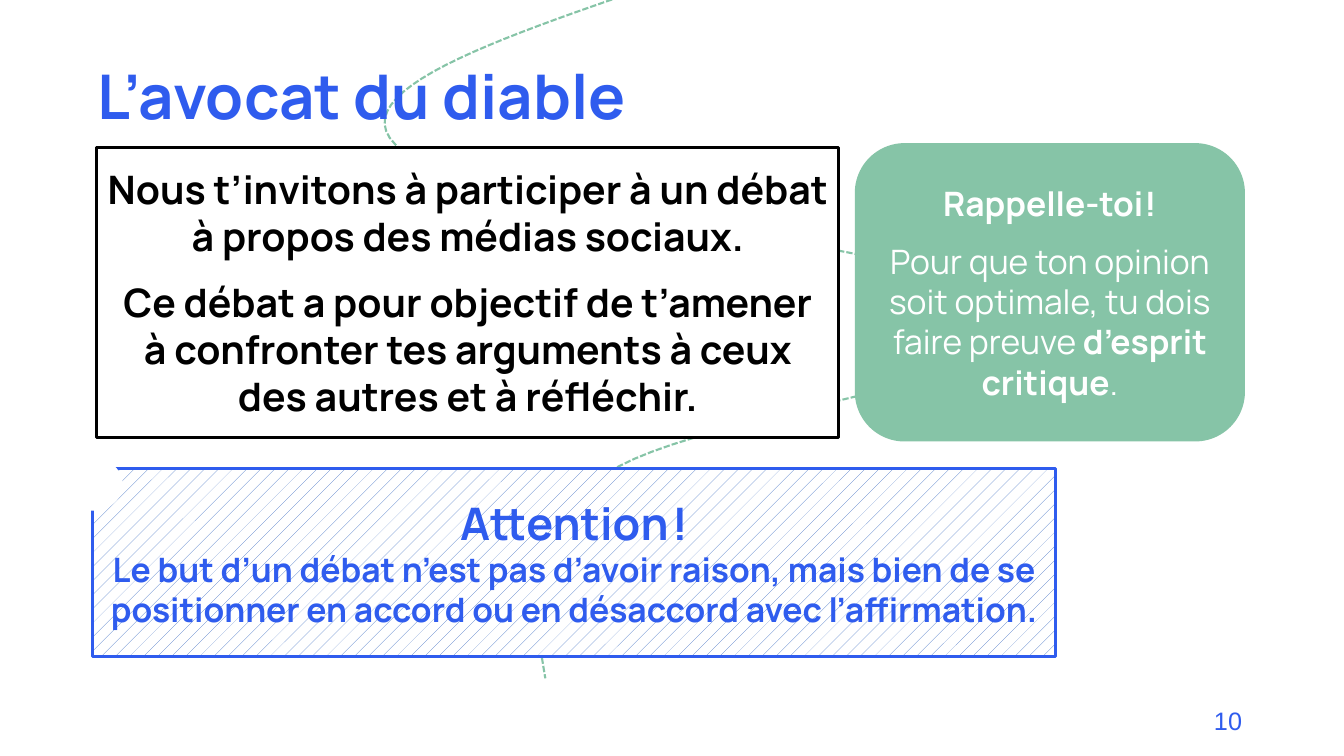
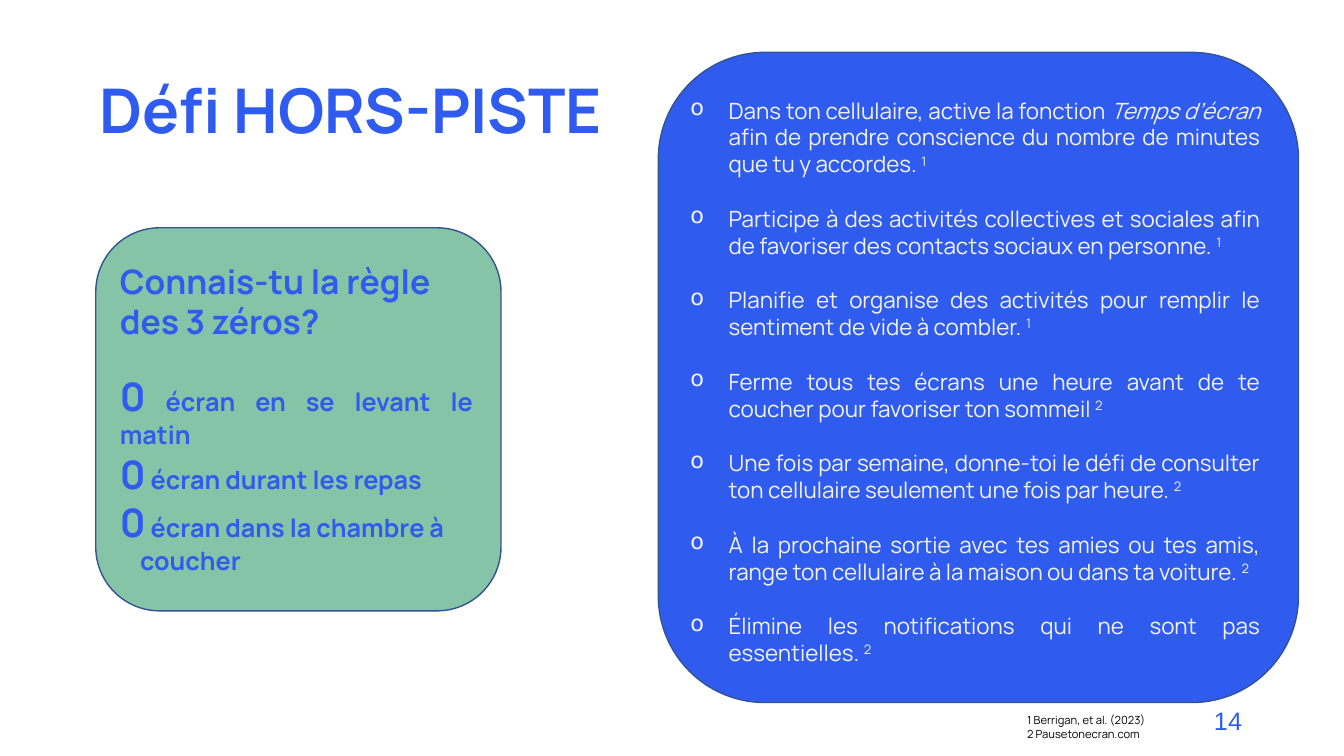
from lxml import etree
from pptx import Presentation
from pptx.dml.color import RGBColor
from pptx.enum.dml import MSO_LINE, MSO_PATTERN
from pptx.enum.shapes import MSO_SHAPE as Preset
from pptx.enum.text import MSO_ANCHOR as Anchor, PP_ALIGN as Align
from pptx.oxml.ns import qn
from pptx.util import Inches, Pt

BLUE, GREEN, WHITE, BLACK = "2F5CEE", "86C4A7", "FFFFFF", "000000"
NAVY, PALE, HATCH = "325491", "F2F2F2", "4472C4"
color = RGBColor.from_string

deck = Presentation()
deck.slide_width, deck.slide_height = Inches(13.33), Inches(7.5)
# The grid has 100 columns and 100 rows.
COL, ROW = deck.slide_width / 100, deck.slide_height / 100


def place(slide, cells, preset=None, fill=None, line=None, weight=1):
    """Add a preset shape, or a text box when no preset is given; cells is left, top, width, height."""
    box = [round(n * unit) for n, unit in zip(cells, (COL, ROW, COL, ROW))]
    if preset is None:
        area = slide.shapes.add_textbox(*box)
        area.text_frame.word_wrap = True
        return area
    area = slide.shapes.add_shape(preset, *box)
    area.shadow.inherit = False
    area.fill.solid()
    area.fill.fore_color.rgb = color(fill)
    if line:
        area.line.color.rgb = color(line)
        area.line.width = Pt(weight)
    else:
        area.line.fill.background()
    return area


def write(area, paragraphs, align=Align.LEFT, anchor=Anchor.TOP, gap=0, **base):
    """Fill area with paragraphs, each a list of (text, style) parts; base is the common style."""
    frame = area.text_frame
    frame.vertical_anchor = anchor
    for i, parts in enumerate(paragraphs):
        paragraph = frame.add_paragraph() if i else frame.paragraphs[0]
        paragraph.alignment = align
        if i and gap:
            paragraph.space_before = Pt(gap)
        for text, changes in parts:
            style = {"font": "Manrope", "bold": False, **base, **changes}
            done = len(paragraph.runs)
            if done:
                paragraph.add_run().text = text
            else:
                paragraph.text = text
            for run in paragraph.runs[done:]:
                run.font.name = style["font"]
                run.font.size = Pt(style["size"])
                run.font.bold = style["bold"]
                run.font.color.rgb = color(style["ink"])
                if "italic" in style:
                    run.font.italic = style["italic"]
                for name in ("spc", "baseline"):
                    if name in style:
                        run._r.get_or_add_rPr().set(name, str(style[name]))
    return frame.paragraphs


BOLD, TIGHT, SUPER = {"bold": True}, {"spc": -200}, {"baseline": 30000}
debate, challenge = (deck.slides.add_slide(deck.slide_layouts[6]) for _ in range(2))

# Dashed trail behind the debate slide
trail = [(46.73, -0.8),
         (35.7, 6), (24.68, 12.93), (30, 20),
         (35.33, 27.07), (75.98, 34.53), (78.53, 41.6),
         (81, 48.8), (51.45, 54.67), (45.15, 62.67),
         (38.78, 70.67), (39.68, 80.27), (40.58, 89.73)]
STEPS = 24
points = []
for first in range(0, len(trail) - 1, 3):
    for step in range(1, STEPS + 1):
        t = step / STEPS
        weights = ((1 - t) ** 3, 3 * t * (1 - t) ** 2, 3 * t ** 2 * (1 - t), t ** 3)
        x, y = (sum(w * p[axis] for w, p in zip(weights, trail[first:first + 4])) for axis in (0, 1))
        points.append((round(x * COL), round(y * ROW)))
pen = debate.shapes.build_freeform(round(trail[0][0] * COL), round(trail[0][1] * ROW))
pen.add_line_segments(points, close=False)
path = pen.convert_to_shape()
path.shadow.inherit = False
path.fill.background()
path.line.color.rgb = color(GREEN)
path.line.width = Pt(1.5)
path.line.dash_style = MSO_LINE.SQUARE_DOT

# Panels of the challenge slide
place(challenge, (48.98, 6.93, 47.63, 86), Preset.ROUNDED_RECTANGLE, BLUE, NAVY)
place(challenge, (7.13, 30.13, 30.15, 50.67), Preset.FLOWCHART_ALTERNATE_PROCESS, GREEN, NAVY)

# Titles and page numbers
for slide, heading, left, top, number in ((debate, "L’avocat du diable", 6.53, 3.47, "10"),
                                          (challenge, "Défi HORS-PISTE", 6.68, 5.33, "14")):
    title = place(slide, (left, top, 86.25, 19.33))
    write(title, [[(heading, BOLD)]], anchor=Anchor.MIDDLE, size=44, ink=BLUE)[0].line_spacing = 0.9
    page_number = place(slide, (70.65, 92.67, 22.5, 5.33))
    write(page_number, [[(number, {})]], Align.RIGHT, size=18, ink=BLUE, font="Arial")

# Debate slide
reminder = place(debate, (63.6, 18.93, 29.03, 39.47), Preset.ROUNDED_RECTANGLE, GREEN)
write(reminder, [
    [("Rappelle-to", BOLD), ("i !", {**BOLD, **TIGHT})],
    [("Pour que ton opinion soit optimale, tu dois faire preuve ", {}),
     ("d’esprit critique", BOLD), (".", {})],
], Align.CENTER, Anchor.MIDDLE, gap=12.6, size=24, ink=WHITE)

invitation = place(debate, (7.2, 19.47, 55.2, 38.4), Preset.RECTANGLE, WHITE, BLACK, 2.25)
write(invitation, [
    [("Nous t’invitons à participer à un débat\và propos des médias sociaux.", {})],
    [("Ce débat a pour objectif de t’amener\và confronter tes arguments à ceux\v"
      "des autres et à réfléchir.", {})],
], Align.CENTER, Anchor.MIDDLE, gap=13.2, size=28, ink=BLACK, bold=True)

warning = place(debate, (6.9, 62, 71.63, 24.8), Preset.RECTANGLE, WHITE, BLUE, 2.25)
warning.fill.patterned()
warning.fill.pattern = MSO_PATTERN.PERCENT_5
warning.fill.fore_color.rgb = color(HATCH)
warning.fill.back_color.rgb = color(WHITE)
write(warning, [
    [("Attentio", {"size": 32}), ("n !", {"size": 32, **TIGHT})],
    [("Le but d’un débat n’est pas d’avoir raison, mais bien de se\v"
      "positionner en accord ou en désaccord avec l’affirmation.", {})],
], Align.CENTER, Anchor.MIDDLE, size=24, ink=BLUE, bold=True)
place(debate, (4.8, 60.67, 4.28, 6.8), Preset.OVAL, WHITE, WHITE)

# Challenge slide: the rule of the three zeros
zeros = ["écran en se levant le matin", "écran durant les repas", "écran dans la chambre à coucher"]
rule = write(place(challenge, (8.18, 33.87, 27.75, 43.07)),
             [[("Connais-tu la règle des 3 zéros?", {"size": 24})]]
             + [[("0", {"size": 28}), (" " + zero, {})] for zero in zeros],
             Align.JUSTIFY, gap=0.3, size=18, ink=BLUE, bold=True)
rule[0].alignment = rule[-1].alignment = Align.LEFT
rule[1].space_before = Pt(22.2)
hanging = rule[-1]._p.get_or_add_pPr()
hanging.set("marL", str(Inches(0.2)))
hanging.set("indent", str(Inches(-0.2)))

# Challenge slide: tips, each with the number of its reference
tips = [
    ([("Dans ton cellulaire, active la fonction ", {}), ("Temps d’écran ", {"italic": True}),
      ("afin de prendre conscience du nombre de minutes que tu y accordes. ", {})], "1"),
    ([("Participe à des activités collectives et sociales afin de favoriser "
       "des contacts sociaux en personne. ", {})], "1"),
    ([("Planifie et organise des activités pour remplir le sentiment de vide à combler. ", {})], "1"),
    ([("Ferme tous tes écrans une heure avant de te coucher pour favoriser ton sommeil ", {})], "2"),
    ([("Une fois par semaine, donne-toi le défi de consulter ton cellulaire "
       "seulement une fois par heure. ", {})], "2"),
    ([("À la prochaine sortie avec tes amies ou tes amis, range ton cellulaire "
       "à la maison ou dans ta voiture. ", {})], "2"),
    ([("Élimine les notifications qui ne sont pas essentielles. ", {})], "2"),
]
tip_list = write(place(challenge, (50.63, 12.13, 43.88, 75.6)),
                 [parts + [(source, SUPER)] for parts, source in tips],
                 Align.JUSTIFY, gap=19.8, size=16, ink=PALE)
for tip in tip_list:
    properties = tip._p.get_or_add_pPr()
    properties.set("marL", str(Inches(0.38)))
    properties.set("indent", str(Inches(-0.38)))
    etree.SubElement(properties, qn("a:buChar")).set("char", "o")

references = ["1 Berrigan, et al. (2023)", "2 Pausetonecran.com"]
write(place(challenge, (75.68, 93.73, 17.48, 4.93)),
      [[(reference, {})] for reference in references], size=8, ink=BLACK)

deck.save("out.pptx")
